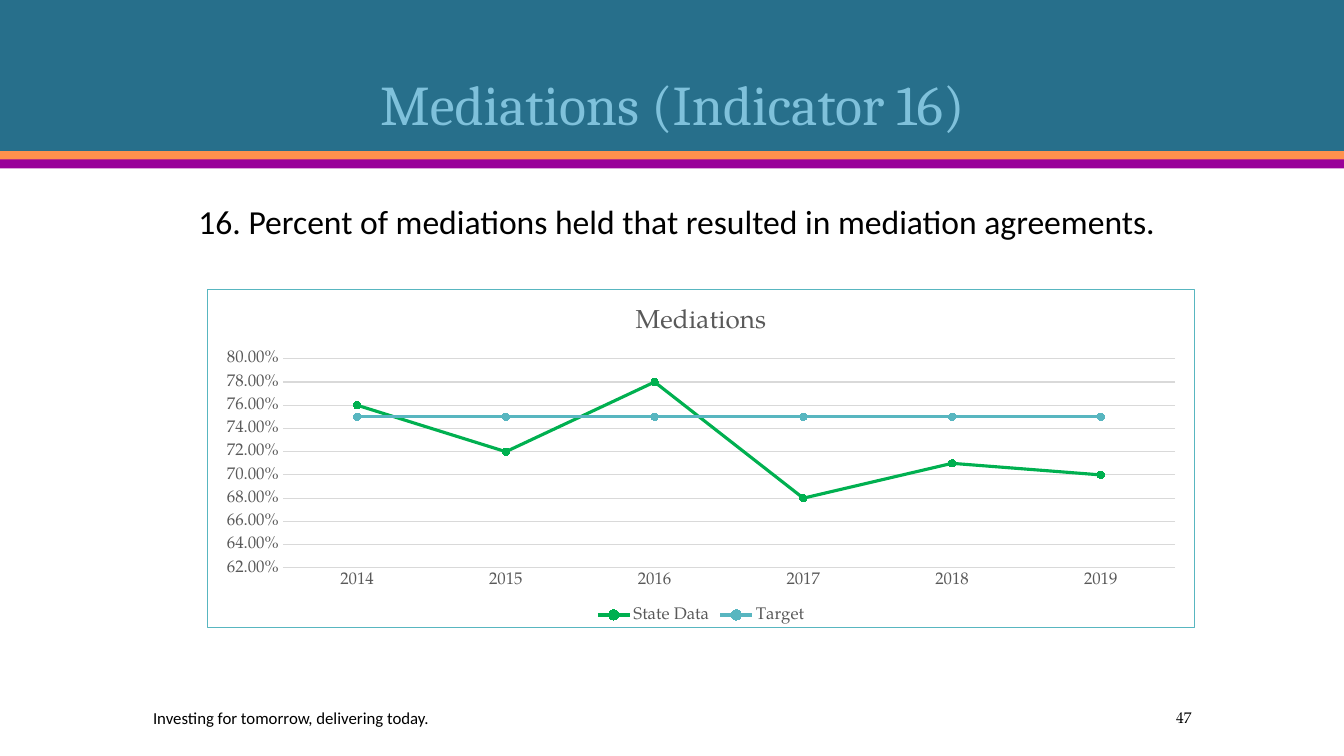
"""Build the Mediations (Indicator 16) slide with its line chart."""
import pptx
import pptx.chart.data
import pptx.dml.color
import pptx.enum.chart
import pptx.enum.shapes
import pptx.enum.text
import pptx.oxml
import pptx.oxml.ns
import pptx.util

Inches = pptx.util.Inches
Pt = pptx.util.Pt
ALIGN = pptx.enum.text.PP_ALIGN
ANCHOR = pptx.enum.text.MSO_ANCHOR

THEME = {
    "teal": "276F8B", "orange": "FF914D", "purple": "990099", "white": "FFFFFF",
    "title": "7FC1DB", "ink": "000000", "gray": "595959",
    "grid": "D9D9D9", "green": "00B050", "aqua": "58B6C0",
    "head_font": "Cambria", "body_font": "Calibri", "chart_font": "TeX Gyre Pagella",
    "title_size": 40, "body_size": 24, "foot_size": 12, "page_size": 11,
    "chart_title_size": 18.6, "chart_size": 12, "hairline": 0.75, "series_line": 2.25,
}
SLIDE_SIZE = (40 / 3, 7.5)
BANDS = [(0, 1.5, "teal"), (1.5, 0.09, "orange"), (1.58, 0.09, "purple")]
TEXTS = [
    {"text": "Mediations (Indicator 16)", "box": (1.42, 0.28, 10.5, 1.13), "font": "head_font",
     "size": "title_size", "color": "title", "align": ALIGN.CENTER, "anchor": ANCHOR.BOTTOM,
     "spacing": 0.9},
    {"text": "Investing for tomorrow, delivering today.", "box": (1.42, 6.97, 6.83, 0.3),
     "font": "body_font", "size": "foot_size", "anchor": ANCHOR.MIDDLE},
    {"text": "47", "box": (10.42, 6.97, 1.5, 0.3), "font": "chart_font", "size": "page_size",
     "align": ALIGN.RIGHT, "anchor": ANCHOR.MIDDLE},
    {"text": "16. Percent of mediations held that resulted in mediation agreements.",
     "box": (1.79, 1.94, 10.31, 0.5), "font": "body_font", "size": "body_size",
     "before": 6, "indent": (0.35, -0.27)},
]
CHART = {
    "title": "Mediations", "box": (2.05, 2.87, 9.81, 3.36),
    "years": ["2014", "2015", "2016", "2017", "2018", "2019"],
    "axis": (0.62, 0.8, 0.02), "format": "0.00%",
    "series": [
        ("State Data", [0.76, 0.72, 0.78, 0.68, 0.71, 0.7], "green"),
        ("Target", [0.75] * 6, "aqua"),
    ],
}


def rgb(name):
    return pptx.dml.color.RGBColor.from_string(THEME[name])


def paint(fill, color):
    fill.solid()
    fill.fore_color.rgb = rgb(color)


def style(font, face, size, color):
    font.name = THEME[face]
    font.size = Pt(THEME[size])
    font.bold = False
    font.color.rgb = rgb(color)


def stroke(line, color, width):
    line.color.rgb = rgb(color)
    line.width = Pt(THEME[width])


def add_band(s, top, height, color):
    sp = s.shapes.add_shape(pptx.enum.shapes.MSO_SHAPE.RECTANGLE, 0, Inches(top),
                            Inches(SLIDE_SIZE[0]), Inches(height))
    sp.shadow.inherit = False
    paint(sp.fill, color)
    sp.line.fill.background()


def add_text(s, item):
    tf = s.shapes.add_textbox(*map(Inches, item["box"])).text_frame
    tf.word_wrap = True
    tf.vertical_anchor = item.get("anchor", ANCHOR.TOP)
    p = tf.paragraphs[0]
    p.alignment = item.get("align", ALIGN.LEFT)
    p.line_spacing = item.get("spacing", 1.0)
    p.space_before = Pt(item.get("before", 0))
    if "indent" in item:
        margin, first = item["indent"]
        pPr = p._p.get_or_add_pPr()
        pPr.set("marL", str(Inches(margin)))
        pPr.set("indent", str(Inches(first)))
    r = p.add_run()
    r.text = item["text"]
    style(r.font, item["font"], item["size"], item.get("color", "ink"))


def add_frame(chart, fill, color, width):
    spPr = pptx.oxml.parse_xml(
        f'<c:spPr {pptx.oxml.ns.nsdecls("c", "a")}>'
        f'<a:solidFill><a:srgbClr val="{THEME[fill]}"/></a:solidFill>'
        f'<a:ln w="{int(Pt(THEME[width]))}" cap="flat" cmpd="sng" algn="ctr">'
        f'<a:solidFill><a:srgbClr val="{THEME[color]}"/></a:solidFill>'
        '<a:prstDash val="solid"/><a:round/></a:ln></c:spPr>')
    chart._chartSpace.find(pptx.oxml.ns.qn("c:chart")).addnext(spPr)


def add_line_chart(s):
    enum = pptx.enum.chart
    data = pptx.chart.data.CategoryChartData(number_format=CHART["format"])
    data.categories = CHART["years"]
    for name, shares, _ in CHART["series"]:
        data.add_series(name, shares)
    chart = s.shapes.add_chart(enum.XL_CHART_TYPE.LINE_MARKERS,
                               *map(Inches, CHART["box"]), data).chart
    style(chart.font, "chart_font", "chart_size", "gray")
    add_frame(chart, "white", "aqua", "hairline")

    chart.has_title = True
    r = chart.chart_title.text_frame.paragraphs[0].add_run()
    r.text = CHART["title"]
    style(r.font, "chart_font", "chart_title_size", "gray")
    chart.chart_title.include_in_layout = False

    chart.has_legend = True
    chart.legend.position = enum.XL_LEGEND_POSITION.BOTTOM
    chart.legend.include_in_layout = False
    style(chart.legend.font, "chart_font", "chart_size", "gray")

    years, values = chart.category_axis, chart.value_axis
    for axis in (years, values):
        axis.major_tick_mark = axis.minor_tick_mark = enum.XL_TICK_MARK.NONE
        style(axis.tick_labels.font, "chart_font", "chart_size", "gray")
    stroke(years.format.line, "grid", "hairline")
    values.format.line.fill.background()
    stroke(values.major_gridlines.format.line, "grid", "hairline")
    values.minimum_scale, values.maximum_scale, values.major_unit = CHART["axis"]
    values.tick_labels.number_format = CHART["format"]
    values.tick_labels.number_format_is_linked = False

    plot = chart.plots[0]
    plot.vary_by_categories = False
    for series, (_, _, color) in zip(plot.series, CHART["series"]):
        series.smooth = False
        stroke(series.format.line, color, "series_line")
        series.marker.style = enum.XL_MARKER_STYLE.CIRCLE
        series.marker.size = 5
        paint(series.marker.format.fill, color)
        stroke(series.marker.format.line, color, "hairline")


def main():
    prs = pptx.Presentation()
    prs.slide_width, prs.slide_height = map(Inches, SLIDE_SIZE)
    s = prs.slides.add_slide(prs.slide_layouts[6])
    for band in BANDS:
        add_band(s, *band)
    for item in TEXTS:
        add_text(s, item)
    add_line_chart(s)
    prs.save("out.pptx")


if __name__ == "__main__":
    main()
